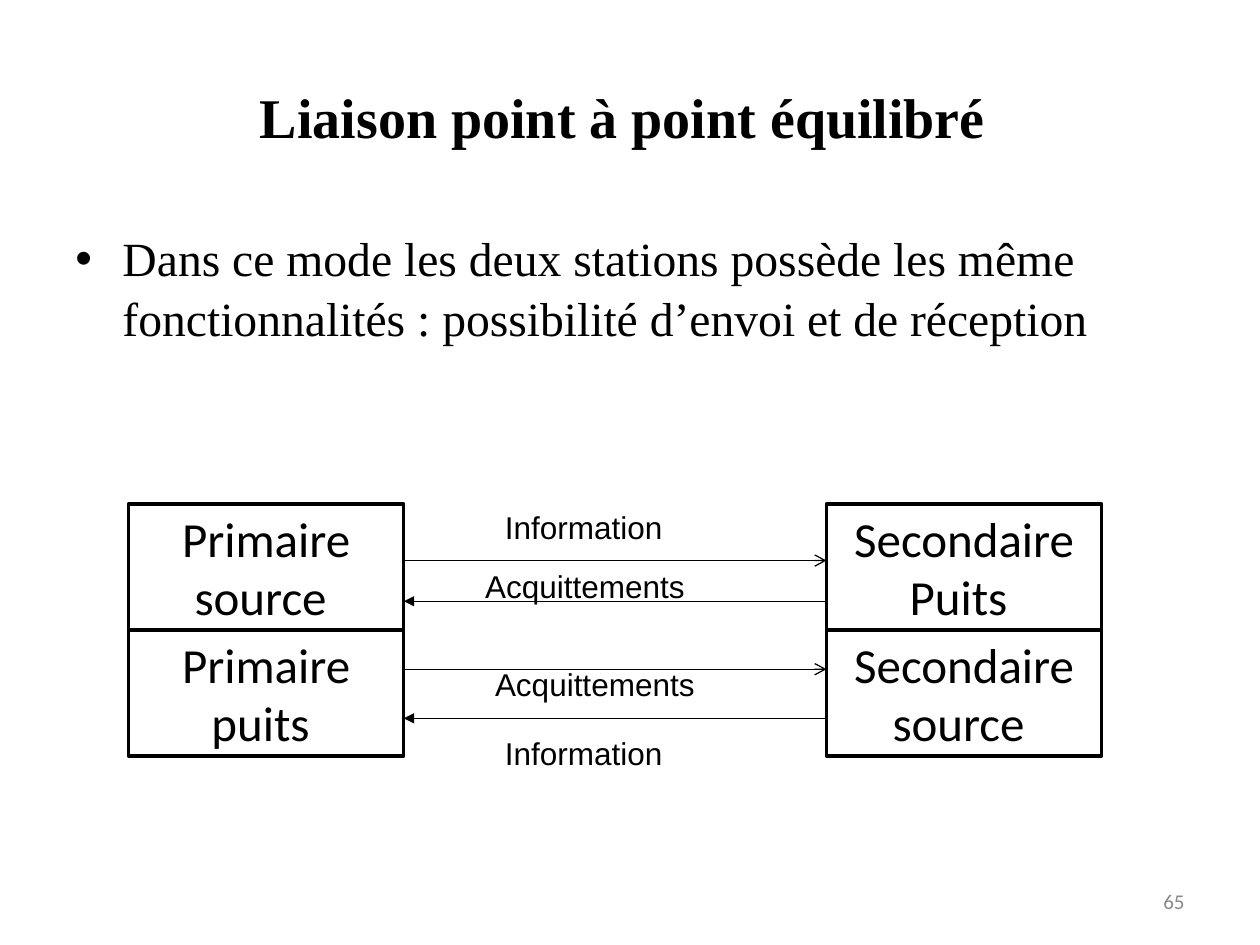
from lxml import etree
from pptx import Presentation
from pptx.dml.color import RGBColor
from pptx.enum.shapes import MSO_CONNECTOR, MSO_SHAPE
from pptx.enum.text import MSO_ANCHOR, PP_ALIGN
from pptx.oxml.ns import qn
from pptx.util import Cm, Pt

TOP, MIDDLE = MSO_ANCHOR.TOP, MSO_ANCHOR.MIDDLE
LEFT, CENTER, RIGHT = PP_ALIGN.LEFT, PP_ALIGN.CENTER, PP_ALIGN.RIGHT
RECTANGLE, STRAIGHT = MSO_SHAPE.RECTANGLE, MSO_CONNECTOR.STRAIGHT

THEME = {
    "ink": RGBColor(0, 0, 0),
    "paper": RGBColor(255, 255, 255),
    "muted": RGBColor(0x89, 0x89, 0x89),
    "title": ("Times New Roman", 32),
    "body": ("Times New Roman", 27.2),
    "station": ("Calibri", 28),
    "label": ("Arial", 18),
    "number": ("Calibri", 12),
    "border": 2,
    "arrow": 0.75,
}

TITLE = "Liaison point à point équilibré "
BODY = ("Dans ce mode les deux stations possède les même "
        "fonctionnalités : possibilité d’envoi et de réception")
PAGE_NUMBER = "65"
STATIONS = [
    ["Primaire source ", "Secondaire Puits "],
    ["Primaire puits ", "Secondaire source "],
]
FLOWS = [
    (11.3, "tailEnd", "arrow"),
    (12.12, "headEnd", "triangle"),
    (13.49, "tailEnd", "arrow"),
    (14.48, "headEnd", "triangle"),
]
LABELS = [
    ("Information", 9.93, 10.11, 3.73),
    ("Acquittements", 9.53, 11.3, 4.62),
    ("Acquittements", 9.73, 13.28, 4.62),
    ("Information", 9.93, 14.68, 3.73),
]

STATION_LEFTS = (2.59, 16.66)
STATION_TOP, STATION_WIDTH, STATION_HEIGHT = 10.16, 5.55, 2.54
INDENT = 0.95


def format_text(shape, text, style, align=LEFT, anchor=TOP, color="ink", bold=False):
    frame = shape.text_frame
    frame.word_wrap = True
    frame.vertical_anchor = anchor
    frame.text = text
    para = frame.paragraphs[0]
    para.alignment = align
    font = para.runs[0].font
    font.name, size = THEME[style]
    font.size = Pt(size)
    font.bold = bold
    font.color.rgb = THEME[color]
    return para


def add_text(page, text, bounds, style, **options):
    box = page.shapes.add_textbox(*map(Cm, bounds))
    return box, format_text(box, text, style, **options)


def add_bullet(para):
    properties = para._p.get_or_add_pPr()
    properties.set("marL", str(Cm(INDENT)))
    properties.set("indent", str(-Cm(INDENT)))
    etree.SubElement(properties, qn("a:buFont")).set("typeface", "Arial")
    etree.SubElement(properties, qn("a:buChar")).set("char", "•")


def add_station(page, text, left, top):
    box = page.shapes.add_shape(
        RECTANGLE, Cm(left), Cm(top), Cm(STATION_WIDTH), Cm(STATION_HEIGHT))
    box.shadow.inherit = False
    box.fill.solid()
    box.fill.fore_color.rgb = THEME["paper"]
    box.line.color.rgb = THEME["ink"]
    box.line.width = Pt(THEME["border"])
    format_text(box, text, "station", align=CENTER, anchor=MIDDLE)


def add_flow(page, height, end, head):
    start = STATION_LEFTS[0] + STATION_WIDTH
    flow = page.shapes.add_connector(
        STRAIGHT, Cm(start), Cm(height), Cm(STATION_LEFTS[1]), Cm(height))
    flow.line.color.rgb = THEME["ink"]
    flow.line.width = Pt(THEME["arrow"])
    etree.SubElement(flow.line._get_or_add_ln(), qn(f"a:{end}")).set("type", head)
    etree.SubElement(flow._element.spPr, qn("a:effectLst"))


def main():
    deck = Presentation()
    deck.slide_width, deck.slide_height = Cm(25.4), Cm(19.05)
    page = deck.slides.add_slide(deck.slide_layouts[6])

    add_text(page, TITLE, (1.27, 0.76, 22.86, 3.18), "title",
             align=CENTER, anchor=MIDDLE, bold=True)
    _, para = add_text(page, BODY, (1.27, 4.45, 22.86, 3.3), "body")
    para.line_spacing = 1.04
    add_bullet(para)

    for row, names in enumerate(STATIONS):
        for left, name in zip(STATION_LEFTS, names):
            add_station(page, name, left, STATION_TOP + row * STATION_HEIGHT)
    for flow in FLOWS:
        add_flow(page, *flow)
    for text, left, top, width in LABELS:
        box, _ = add_text(page, text, (left, top, width, 1.02), "label")
        box.text_frame.word_wrap = False

    add_text(page, PAGE_NUMBER, (18.2, 17.66, 5.93, 1.01), "number",
             align=RIGHT, anchor=MIDDLE, color="muted")
    deck.save("out.pptx")


if __name__ == "__main__":
    main()
